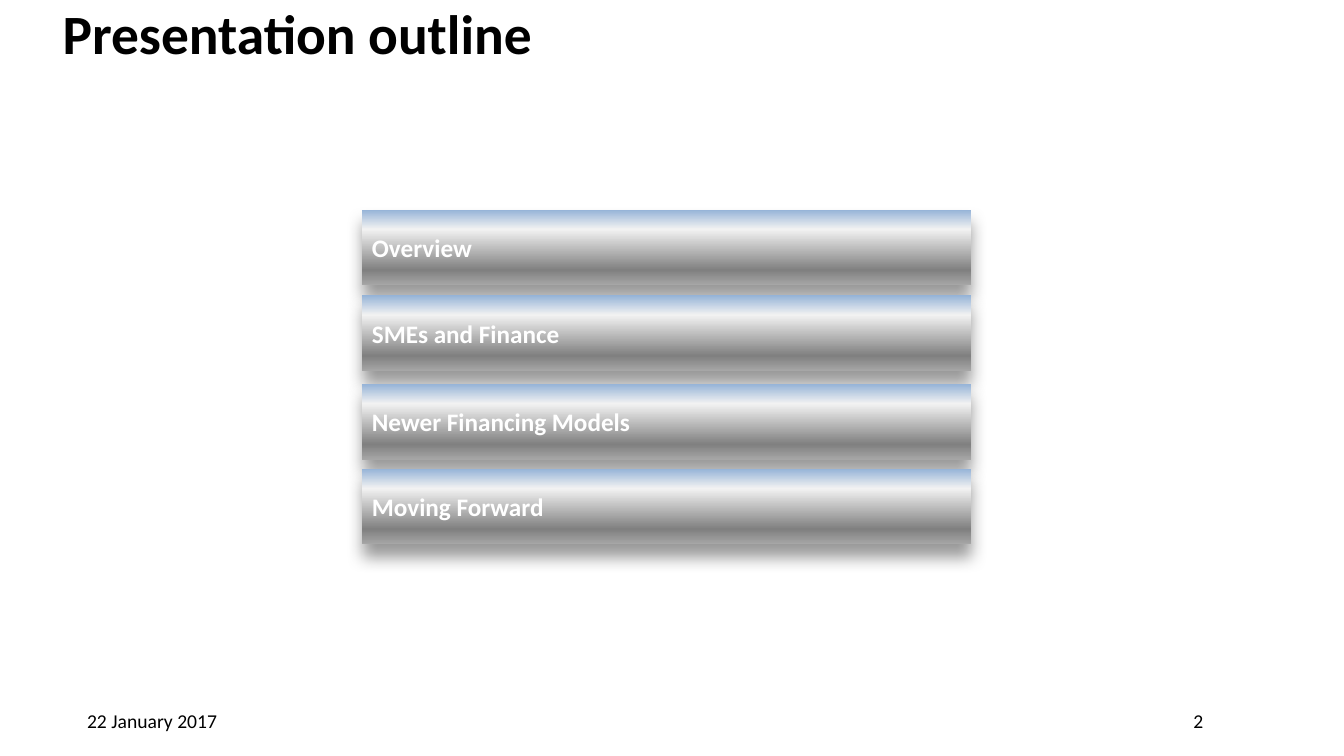
from dataclasses import dataclass

from pptx import Presentation
from pptx.dml.color import RGBColor
from pptx.enum.shapes import MSO_SHAPE
from pptx.enum.text import MSO_ANCHOR, MSO_AUTO_SIZE, PP_ALIGN
from pptx.oxml import parse_xml
from pptx.oxml.ns import nsdecls
from pptx.util import Inches, Pt

RECTANGLE = MSO_SHAPE.RECTANGLE
MIDDLE = MSO_ANCHOR.MIDDLE
LEFT, CENTER = PP_ALIGN.LEFT, PP_ALIGN.CENTER
NO_AUTOFIT = MSO_AUTO_SIZE.NONE
TITLE_ONLY = 5


@dataclass(frozen=True)
class Theme:
    font: str = "Calibri"
    dark: str = "000000"
    light: str = "FFFFFF"
    title_size: float = 39.6
    bar_size: float = 18
    footer_size: float = 14
    bar_stops: tuple = ((0, "95B3D7"), (26, "F2F2F2"), (80, "808080"), (100, "A6A6A6"))


THEME = Theme()


def write_text(shape, text, size, color, bold, alignment):
    """Fill a shape with one vertically centred, formatted paragraph."""
    frame = shape.text_frame
    frame.word_wrap = True
    frame.auto_size = NO_AUTOFIT
    frame.vertical_anchor = MIDDLE
    paragraph = frame.paragraphs[0]
    paragraph.alignment = alignment
    run = paragraph.add_run()
    run.text = text
    for name, value in {"name": THEME.font, "size": Pt(size), "bold": bold}.items():
        setattr(run.font, name, value)
    run.font.color.rgb = RGBColor.from_string(color)


def style_bar(bar):
    """Give a bar its vertical gradient and soft shadow, without an outline."""
    stops = "".join(
        f'<a:gs pos="{position * 1000}"><a:srgbClr val="{color}"/></a:gs>'
        for position, color in THEME.bar_stops
    )
    properties = bar._element.spPr
    properties.append(parse_xml(
        f'<a:gradFill {nsdecls("a")} rotWithShape="1"><a:gsLst>{stops}</a:gsLst>'
        '<a:lin ang="5400000" scaled="0"/></a:gradFill>'
    ))
    bar.line.fill.background()
    properties.append(parse_xml(
        f'<a:effectLst {nsdecls("a")}>'
        f'<a:outerShdw blurRad="{Pt(12)}" dist="{Pt(9)}" dir="5400000" rotWithShape="0">'
        f'<a:srgbClr val="{THEME.dark}"><a:alpha val="40000"/></a:srgbClr>'
        '</a:outerShdw></a:effectLst>'
    ))


presentation = Presentation()
presentation.slide_width = Inches(13.33)
presentation.slide_height = Inches(7.5)
slide = presentation.slides.add_slide(presentation.slide_layouts[TITLE_ONLY])

# Footer
for text, left, width in (("22 January 2017", 0.01, 3), ("2", 10.45, 2.87)):
    footer = slide.shapes.add_textbox(Inches(left), Inches(6.95), Inches(width), Inches(0.4))
    write_text(footer, text, THEME.footer_size, THEME.dark, False, CENTER)

# Title, held in the upper half of its box by the bottom margin
title = slide.shapes.title
title.left, title.top = Inches(0.52), Inches(0.12)
title.width, title.height = Inches(11.37), Inches(1.08)
write_text(title, "Presentation outline", THEME.title_size, THEME.dark, True, LEFT)
title.text_frame.margin_bottom = Inches(0.65)
title.text_frame.paragraphs[0].line_spacing = 0.9

# Outline bars
outline = {
    "Overview": 2.08,
    "SMEs and Finance": 2.93,
    "Newer Financing Models": 3.81,
    "Moving Forward": 4.65,
}
for topic, top in outline.items():
    bar = slide.shapes.add_shape(RECTANGLE, Inches(3.59), Inches(top), Inches(6.04), Inches(0.75))
    style_bar(bar)
    write_text(bar, topic, THEME.bar_size, THEME.light, True, LEFT)

presentation.save("out.pptx")
